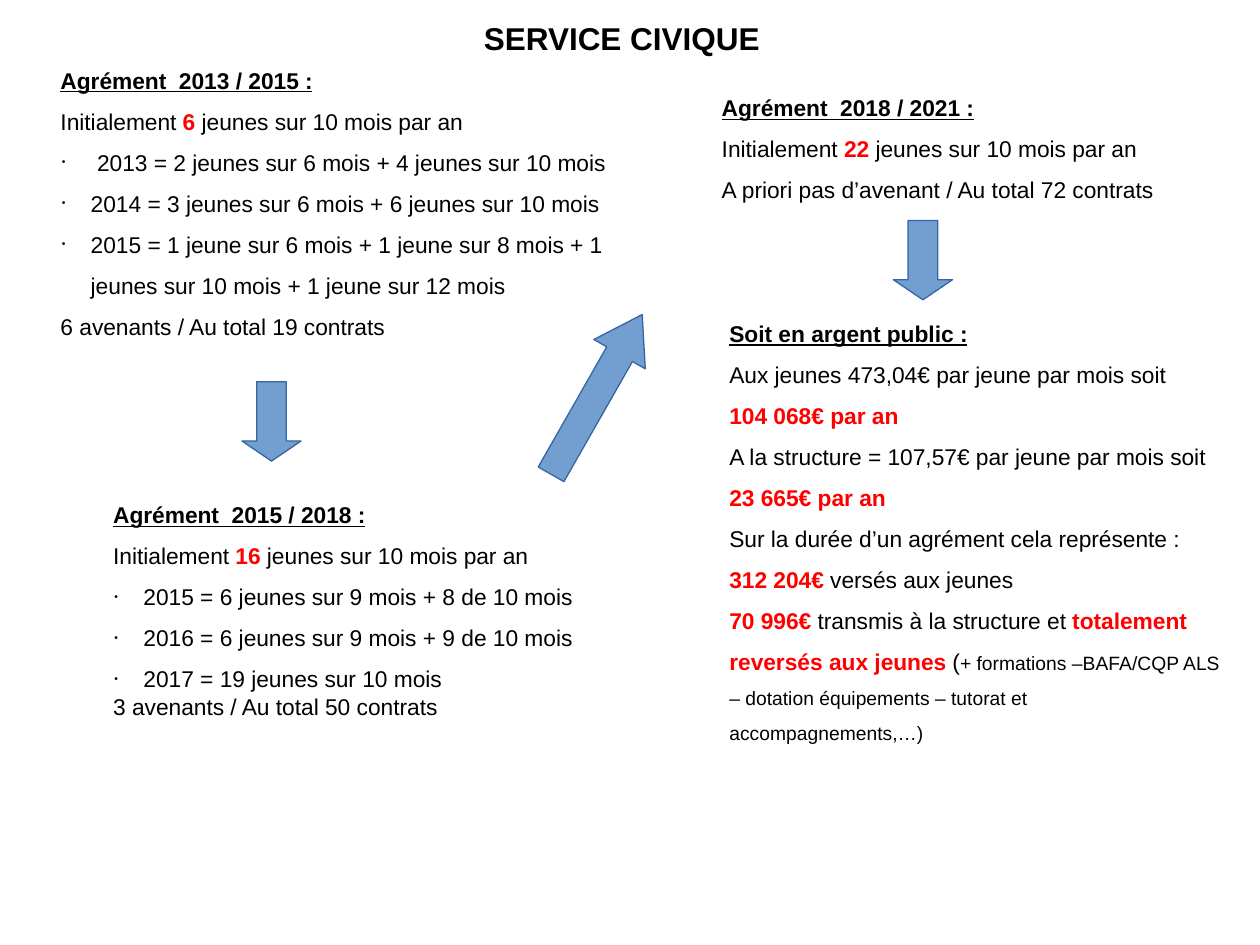
from dataclasses import dataclass

from lxml.etree import SubElement
from pptx import Presentation
from pptx.dml.color import RGBColor
from pptx.enum.shapes import MSO_SHAPE
from pptx.enum.text import MSO_ANCHOR, MSO_AUTO_SIZE, PP_ALIGN
from pptx.oxml.ns import qn
from pptx.util import Inches, Pt

BLACK = RGBColor(0x00, 0x00, 0x00)
RED = RGBColor(0xFF, 0x00, 0x00)
WHITE = RGBColor(0xFF, 0xFF, 0xFF)
ARROW_FILL = RGBColor(0x72, 0x9F, 0xCF)
ARROW_LINE = RGBColor(0x34, 0x65, 0xA4)
FONT = "Arial"


@dataclass(frozen=True)
class Span:
    text: str
    color: RGBColor = BLACK
    bold: bool = False
    underline: bool = False
    size: float = 13


@dataclass(frozen=True)
class Para:
    spans: tuple[Span, ...]
    bullet: bool = False
    spacing: float = 1.5


@dataclass(frozen=True)
class Block:
    left: float
    top: float
    width: float
    height: float
    paras: tuple[Para, ...]
    margin_left: float = 0.1
    filled: bool = False


@dataclass(frozen=True)
class Arrow:
    left: float
    top: float
    height: float
    head: float
    rotation: float = 0


def heading(text: str) -> Para:
    return Para((Span(text, bold=True, underline=True),))


def line(*spans: Span | str, spacing: float = 1.5) -> Para:
    return Para(tuple(Span(s) if isinstance(s, str) else s for s in spans), spacing=spacing)


def item(text: str) -> Para:
    return Para((Span(text),), bullet=True)


def red(text: str) -> Span:
    return Span(text, RED, bold=True)


BLOCKS = (
    Block(0.28, 0.37, 4.72, 2.44, (
        heading("Agrément  2013 / 2015 :"),
        line("Initialement ", red("6"), " jeunes sur 10 mois par an"),
        item(" 2013 = 2 jeunes sur 6 mois + 4 jeunes sur 10 mois"),
        item("2014 = 3 jeunes sur 6 mois + 6 jeunes sur 10 mois"),
        item("2015 = 1 jeune sur 6 mois + 1 jeune sur 8 mois + 1 jeunes sur 10 mois + 1 jeune sur 12 mois"),
        line("6 avenants / Au total 19 contrats"),
    ), margin_left=0.2, filled=True),
    Block(5.63, 0.59, 3.86, 1.07, (
        heading("Agrément  2018 / 2021 :"),
        line("Initialement ", red("22"), " jeunes sur 10 mois par an"),
        line("A priori pas d’avenant / Au total 72 contrats"),
    )),
    Block(0.8, 3.82, 3.94, 1.96, (
        heading("Agrément  2015 / 2018 :"),
        line("Initialement ", red("16 "), "jeunes sur 10 mois par an"),
        item("2015 = 6 jeunes sur 9 mois + 8 de 10 mois"),
        item("2016 = 6 jeunes sur 9 mois + 9 de 10 mois"),
        item("2017 = 19 jeunes sur 10 mois"),
        line("3 avenants / Au total 50 contrats", spacing=1.0),
    )),
    Block(5.69, 2.38, 4.14, 3.33, (
        heading("Soit en argent public :"),
        line("Aux jeunes 473,04€ par jeune par mois soit"),
        line(red("104 068€ par an")),
        line("A la structure = 107,57€ par jeune par mois soit ", red("23 665€ par an")),
        line("Sur la durée d’un agrément cela représente :"),
        line(red("312 204€ "), "versés aux jeunes"),
        line(red("70 996€ "), "transmis à la structure et ",
             red("totalement reversés aux jeunes "), "(",
             Span("+ formations –BAFA/CQP ALS – dotation équipements – tutorat et accompagnements,…)", size=11)),
    )),
)

ARROWS = (
    Arrow(1.92, 3.03, 0.63, 0.34),
    Arrow(4.5, 2.4, 1.46, 0.77, 209.7),
    Arrow(7.09, 1.75, 0.63, 0.34),
)


def add_bullet(paragraph) -> None:
    properties = paragraph._p.get_or_add_pPr()
    properties.set("marL", str(Inches(0.24)))
    properties.set("indent", str(Inches(-0.23)))
    color = SubElement(properties, qn("a:buClr"))
    SubElement(color, qn("a:srgbClr"), val=str(BLACK))
    SubElement(properties, qn("a:buSzPct"), val="45000")
    SubElement(properties, qn("a:buFont"), typeface=FONT)
    SubElement(properties, qn("a:buChar"), char="•")


def add_span(paragraph, span: Span) -> None:
    run = paragraph.add_run()
    run.text = span.text
    run.font.name = FONT
    run.font.size = Pt(span.size)
    run.font.bold = span.bold
    run.font.underline = span.underline
    run.font.color.rgb = span.color


def add_block(page, block: Block) -> None:
    box = page.shapes.add_textbox(
        Inches(block.left), Inches(block.top), Inches(block.width), Inches(block.height))
    if block.filled:
        box.fill.solid()
        box.fill.fore_color.rgb = WHITE
    frame = box.text_frame
    frame.word_wrap = True
    frame.margin_left = Inches(block.margin_left)
    for index, para in enumerate(block.paras):
        paragraph = frame.add_paragraph() if index else frame.paragraphs[0]
        if para.bullet:
            add_bullet(paragraph)
        paragraph.line_spacing = para.spacing
        for span in para.spans:
            add_span(paragraph, span)


def add_arrow(page, arrow: Arrow) -> None:
    shape = page.shapes.add_shape(
        MSO_SHAPE.DOWN_ARROW,
        Inches(arrow.left), Inches(arrow.top), Inches(0.47), Inches(arrow.height))
    shape.adjustments[0] = 0.5
    shape.adjustments[1] = arrow.head
    shape.rotation = arrow.rotation
    shape.shadow.inherit = False
    shape.fill.solid()
    shape.fill.fore_color.rgb = ARROW_FILL
    shape.line.color.rgb = ARROW_LINE
    shape.line.width = Pt(0.75)


def set_title(page, text: str) -> None:
    title = page.shapes.title
    title.left, title.top = Inches(3.74), Inches(0.1)
    title.width, title.height = Inches(2.52), Inches(0.4)
    frame = title.text_frame
    frame.auto_size = MSO_AUTO_SIZE.NONE
    frame.vertical_anchor = MSO_ANCHOR.TOP
    paragraph = frame.paragraphs[0]
    paragraph.alignment = PP_ALIGN.LEFT
    add_span(paragraph, Span(text, bold=True, size=18))
    page.shapes._spTree.append(title._element)


def main() -> None:
    deck = Presentation()
    deck.slide_width, deck.slide_height = Inches(10), Inches(7.5)
    page = deck.slides.add_slide(deck.slide_layouts[5])
    for block in BLOCKS:
        add_block(page, block)
    for arrow in ARROWS:
        add_arrow(page, arrow)
    set_title(page, "SERVICE CIVIQUE")
    deck.save("out.pptx")


if __name__ == "__main__":
    main()
